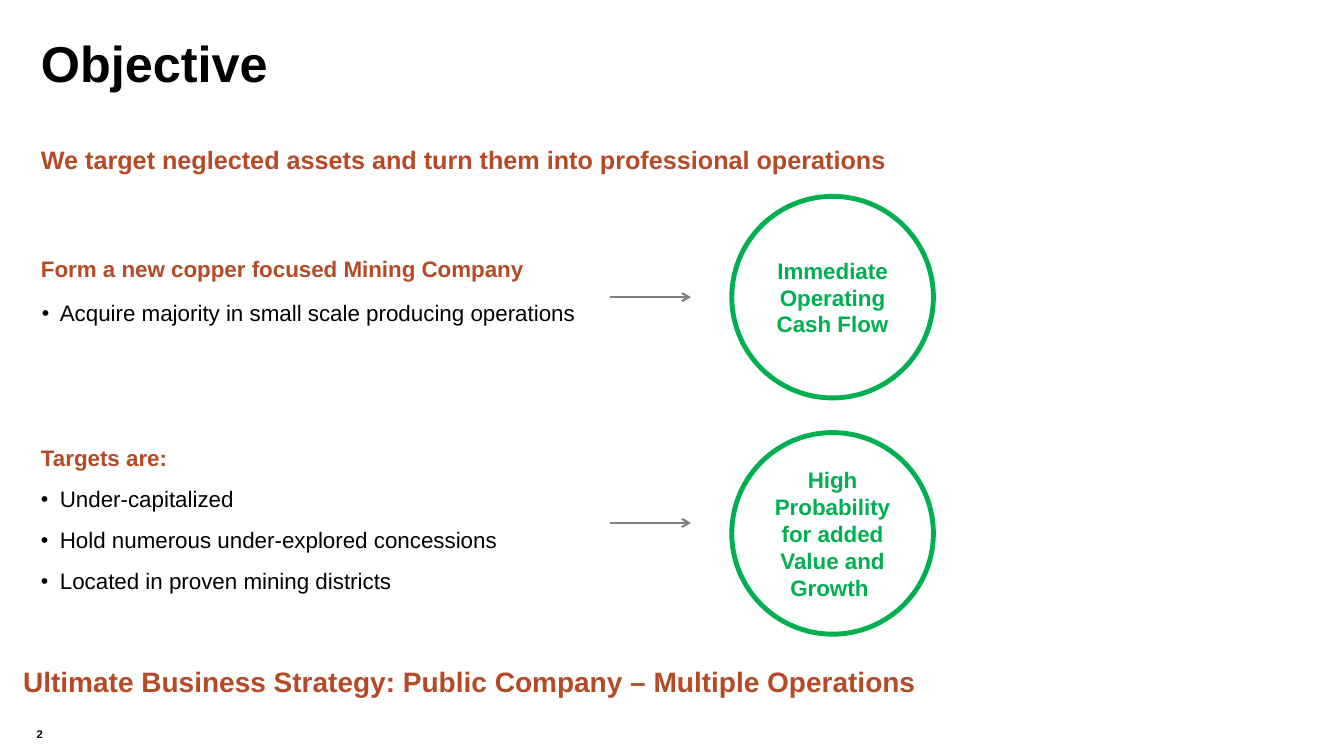
from lxml.etree import SubElement
from pptx import Presentation
from pptx.dml.color import RGBColor
from pptx.enum.shapes import MSO_CONNECTOR, MSO_SHAPE
from pptx.enum.text import MSO_ANCHOR, MSO_AUTO_SIZE, PP_ALIGN
from pptx.oxml.ns import qn
from pptx.util import Emu, Pt

RUST, GREEN, GREY, BLACK = "B64926", "00B050", "808080", "000000"
SIDES = ("margin_left", "margin_top", "margin_right", "margin_bottom")


def px(length):
    """Turn px, 96 to the inch, into EMU."""
    return Emu(length * 9525)


def rgb(hex_string):
    return RGBColor.from_string(hex_string)


def apply(target, formats):
    for attribute, value in formats.items():
        setattr(target, attribute, value)


class ObjectiveSlide:
    font_name = "Arial"
    list_spacing = {"space_before": Pt(0), "space_after": Pt(12)}

    def __init__(self, deck):
        self.slide = deck.slides.add_slide(deck.slide_layouts[3])
        self.shapes = self.slide.shapes

    def place(self, shape, box):
        apply(shape, dict(zip(("left", "top", "width", "height"), map(px, box))))

    def frame(self, shape, insets=(10, 5, 10, 5), anchor=MSO_ANCHOR.TOP):
        text_frame = shape.text_frame
        apply(text_frame, {"word_wrap": True, "auto_size": MSO_AUTO_SIZE.NONE,
                           "vertical_anchor": anchor})
        apply(text_frame, dict(zip(SIDES, map(px, insets))))
        return text_frame

    def set_text(self, paragraph, text, size, color, bold=True, **formats):
        paragraph.text = text
        apply(paragraph, formats)
        apply(paragraph.font, {"name": self.font_name, "size": Pt(size), "bold": bold})
        paragraph.font.color.rgb = rgb(color)

    def title(self, text, box):
        heading = self.shapes.title
        self.place(heading, box)
        self.set_text(self.frame(heading, (10, 7, 15, 0)).paragraphs[0],
                      text, 36, BLACK, alignment=PP_ALIGN.LEFT)

    def label(self, text, box, size, color=RUST, insets=(10, 5, 10, 5), align=PP_ALIGN.LEFT):
        text_box = self.shapes.add_textbox(*map(px, box))
        self.set_text(self.frame(text_box, insets).paragraphs[0],
                      text, size, color, alignment=align)

    def bullet(self, paragraph, hanging):
        """Set the bullet, or none where hanging is 0."""
        properties = paragraph._p.get_or_add_pPr()
        properties.set("marL", str(px(18 if hanging else 0)))
        properties.set("indent", str(px(-hanging)))
        if not hanging:
            SubElement(properties, qn("a:buNone"))
            return
        SubElement(properties, qn("a:buSzPct"), val="95000")
        SubElement(properties, qn("a:buFont"), typeface=self.font_name)
        SubElement(properties, qn("a:buChar"), char="•")

    def bullet_list(self, index, heading, items, box, insets, hanging, item_spacing):
        body = self.slide.placeholders[index]
        self.place(body, box)
        text_frame = self.frame(body, insets)
        lead = text_frame.paragraphs[0]
        self.bullet(lead, 0)
        self.set_text(lead, heading, 16, RUST, line_spacing=0.9, **self.list_spacing)
        for item in items:
            paragraph = text_frame.add_paragraph()
            self.bullet(paragraph, hanging)
            self.set_text(paragraph, item, 16, BLACK, bold=False, level=1,
                          line_spacing=item_spacing, **self.list_spacing)

    def outcome(self, text, top):
        circle = self.shapes.add_shape(MSO_SHAPE.OVAL, *map(px, (697, top, 192, 192)))
        circle.shadow.inherit = False
        circle.fill.background()
        circle.line.color.rgb = rgb(GREEN)
        circle.line.width = Pt(3.5)
        text_frame = self.frame(circle, (0, 0, 0, 0), MSO_ANCHOR.MIDDLE)
        self.set_text(text_frame.paragraphs[0], text, 16, GREEN, alignment=PP_ALIGN.CENTER)

    def arrow(self, y):
        connector = self.shapes.add_connector(
            MSO_CONNECTOR.STRAIGHT, *map(px, (581, y, 658, y)))
        connector.line.color.rgb = rgb(GREY)
        connector.line.width = Pt(1.5)
        SubElement(connector.line._get_or_add_ln(), qn("a:tailEnd"), type="arrow")
        SubElement(connector._element.spPr, qn("a:effectLst"))


def main():
    deck = Presentation()
    deck.slide_width, deck.slide_height = px(1280), px(720)
    page = ObjectiveSlide(deck)

    page.title("Objective", (29, 24, 1223, 58))
    page.label("We target neglected assets and turn them into professional operations",
               (29, 132, 1064, 38), 18)
    page.bullet_list(1, "Form a new copper focused Mining Company",
                     ["Acquire majority in small scale producing operations"],
                     (29, 236, 554, 127), (10, 10, 19, 10), 17, 1.0)
    page.bullet_list(2, "Targets are:",
                     ["Under-capitalized",
                      "Hold numerous under-explored concessions",
                      "Located in proven mining districts"],
                     (29, 421, 613, 175), (10, 5, 10, 5), 18, 0.9)

    for outcome, circle_top, arrow_y in (
            ("Immediate Operating Cash Flow", 187, 283),
            ("High Probability for added Value and Growth ", 412, 498)):
        page.outcome(outcome, circle_top)
        page.arrow(arrow_y)

    page.label("Ultimate Business Strategy: Public Company – Multiple Operations",
               (12, 628, 952, 42), 20)
    page.label("2", (12, 687, 35, 24), 8, BLACK, (6, 6, 6, 6), PP_ALIGN.RIGHT)
    deck.save("out.pptx")


if __name__ == "__main__":
    main()
